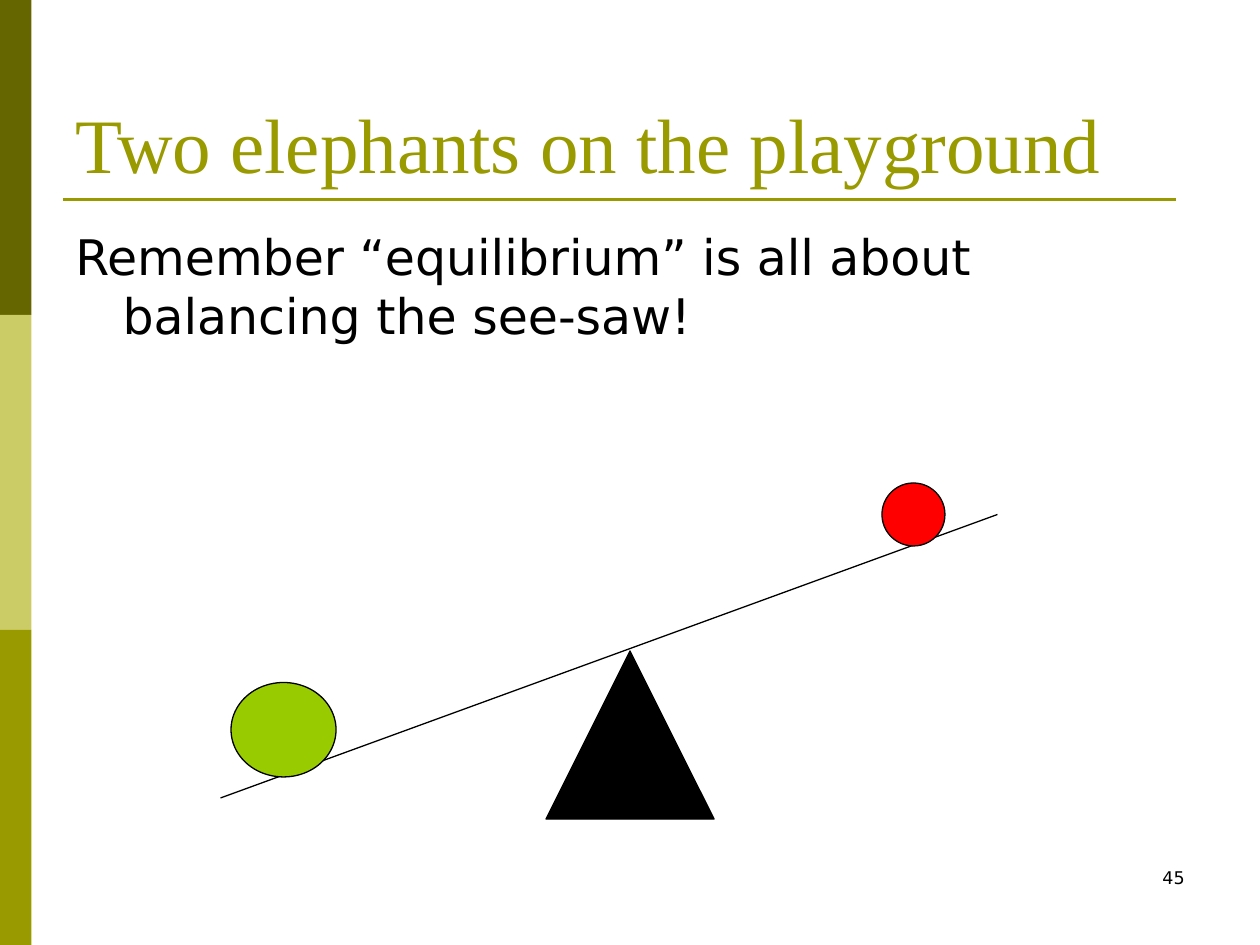
from dataclasses import dataclass

from lxml import etree
from pptx import Presentation
from pptx.dml.color import RGBColor
from pptx.enum.shapes import MSO_CONNECTOR, MSO_SHAPE
from pptx.enum.text import MSO_ANCHOR, PP_ALIGN
from pptx.oxml.ns import qn
from pptx.util import Emu, Pt

RECTANGLE = MSO_SHAPE.RECTANGLE
TRIANGLE = MSO_SHAPE.ISOSCELES_TRIANGLE
OVAL = MSO_SHAPE.OVAL
STRAIGHT = MSO_CONNECTOR.STRAIGHT
TOP, BOTTOM = MSO_ANCHOR.TOP, MSO_ANCHOR.BOTTOM
LEFT, RIGHT = PP_ALIGN.LEFT, PP_ALIGN.RIGHT

PX = 9525  # EMU per px, 96 px to the inch
PAGE_WIDTH, PAGE_HEIGHT = 960, 720


@dataclass(frozen=True)
class Theme:
    dark_olive: str = "666600"
    pale_olive: str = "CCCC66"
    olive: str = "999900"
    black: str = "000000"
    green: str = "99CC00"
    red: str = "FF0000"
    title_font: str = "Times New Roman"
    body_font: str = "DejaVu Sans"
    title_size: int = 44
    body_size: int = 28
    number_size: int = 10
    rule_width: float = 1.5
    outline_width: float = 0.75


THEME = Theme()


@dataclass(frozen=True)
class Figure:
    kind: int
    left: int
    top: int
    width: int
    height: int
    fill: str
    outlined: bool = True


@dataclass(frozen=True)
class Line:
    x1: int
    y1: int
    x2: int
    y2: int
    color: str
    weight: float


@dataclass(frozen=True)
class Label:
    text: str
    left: int
    top: int
    width: int
    height: int
    font: str
    size: int
    color: str
    anchor: int = TOP
    align: int = LEFT
    hanging: int = 0
    space_before: int = 0


def px(*lengths: int) -> list[Emu]:
    return [Emu(length * PX) for length in lengths]


def draw_figure(shapes, figure: Figure) -> None:
    shape = shapes.add_shape(
        figure.kind, *px(figure.left, figure.top, figure.width, figure.height))
    shape.shadow.inherit = False
    shape.fill.solid()
    shape.fill.fore_color.rgb = RGBColor.from_string(figure.fill)
    if figure.outlined:
        shape.line.color.rgb = RGBColor.from_string(THEME.black)
        shape.line.width = Pt(THEME.outline_width)
    else:
        shape.line.fill.background()


def draw_line(shapes, line: Line) -> None:
    connector = shapes.add_connector(
        STRAIGHT, *px(line.x1, line.y1, line.x2, line.y2))
    connector.line.color.rgb = RGBColor.from_string(line.color)
    connector.line.width = Pt(line.weight)
    etree.SubElement(connector._element.spPr, qn("a:effectLst"))


def draw_label(shapes, label: Label) -> None:
    box = shapes.add_textbox(
        *px(label.left, label.top, label.width, label.height))
    frame = box.text_frame
    frame.word_wrap = True
    frame.vertical_anchor = label.anchor
    para = frame.paragraphs[0]
    para.text = label.text
    para.alignment = label.align
    para.space_before = Pt(label.space_before)
    para.font.name = label.font
    para.font.size = Pt(label.size)
    para.font.color.rgb = RGBColor.from_string(label.color)
    if label.hanging:
        properties = para._p.get_or_add_pPr()
        properties.set("marL", str(label.hanging * PX))
        properties.set("indent", str(-label.hanging * PX))


def draw_frame(shapes) -> None:
    """Side bands and the rule under the title."""
    bands = (THEME.dark_olive, THEME.pale_olive, THEME.olive)
    band_height = PAGE_HEIGHT // len(bands)
    for index, color in enumerate(bands):
        draw_figure(shapes, Figure(RECTANGLE, 0, index * band_height,
                                   24, band_height, color, outlined=False))
    draw_line(shapes, Line(48, 152, 896, 152, THEME.olive, THEME.rule_width))


def draw_seesaw(shapes) -> None:
    """Pivot, plank and the two riders, as one group."""
    parts = shapes.add_group_shape().shapes
    draw_figure(parts, Figure(TRIANGLE, 416, 496, 128, 128, THEME.black))
    draw_line(parts, Line(760, 392, 168, 608, THEME.black, THEME.outline_width))
    draw_figure(parts, Figure(OVAL, 176, 520, 80, 72, THEME.green))
    draw_figure(parts, Figure(OVAL, 672, 368, 48, 48, THEME.red))


LABELS = (
    Label("Two elephants on the playground", 48, 29, 864, 120,
          THEME.title_font, THEME.title_size, THEME.olive, anchor=BOTTOM),
    Label("Remember “equilibrium” is all about balancing the see-saw!",
          48, 168, 864, 475, THEME.body_font, THEME.body_size, THEME.black,
          hanging=36, space_before=2),
    Label("45", 688, 656, 224, 48, THEME.body_font, THEME.number_size,
          THEME.black, align=RIGHT),
)


def main() -> None:
    deck = Presentation()
    deck.slide_width, deck.slide_height = px(PAGE_WIDTH, PAGE_HEIGHT)
    page = deck.slides.add_slide(deck.slide_layouts[6])
    draw_frame(page.shapes)
    draw_seesaw(page.shapes)
    for label in LABELS:
        draw_label(page.shapes, label)
    deck.save("out.pptx")


if __name__ == "__main__":
    main()
